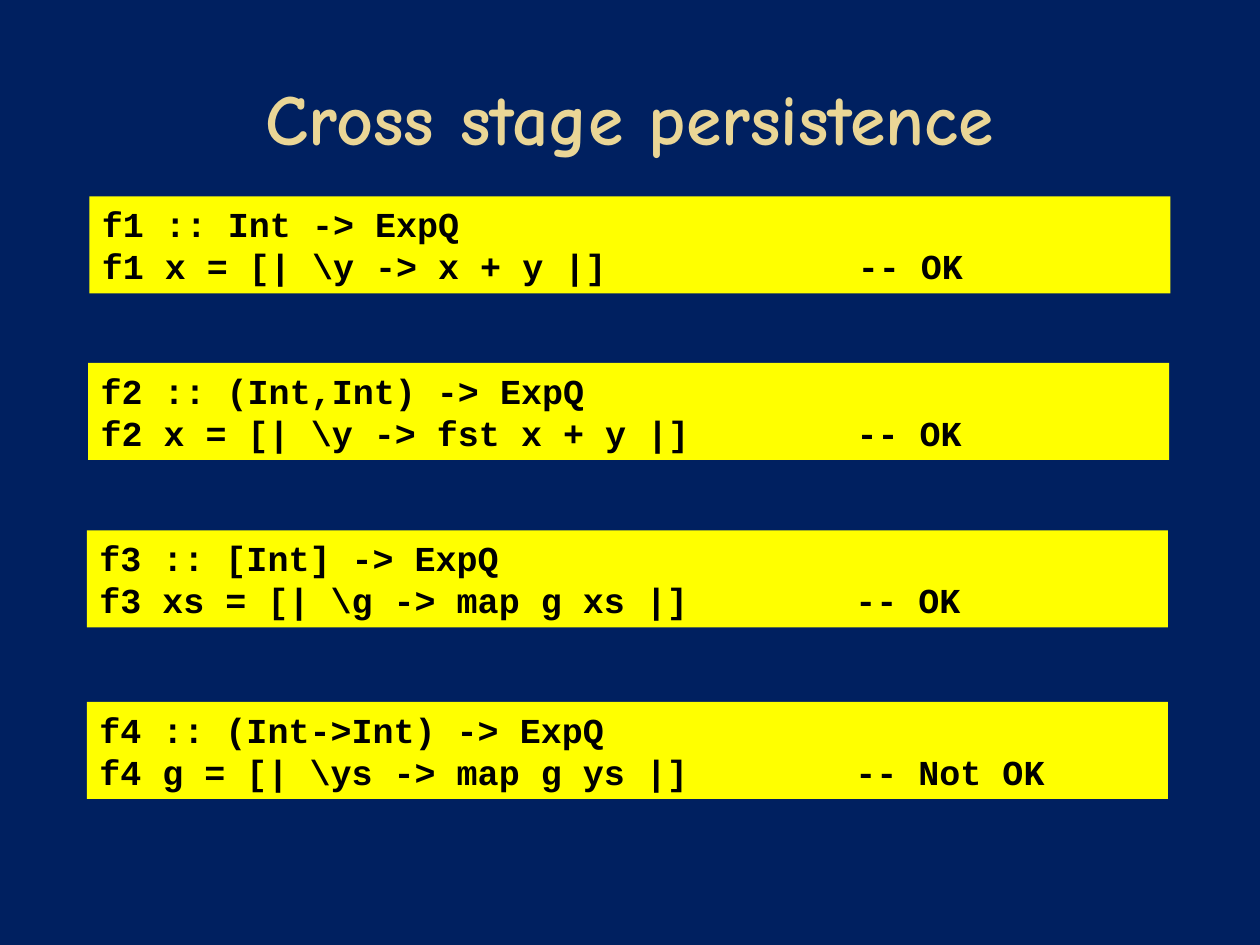
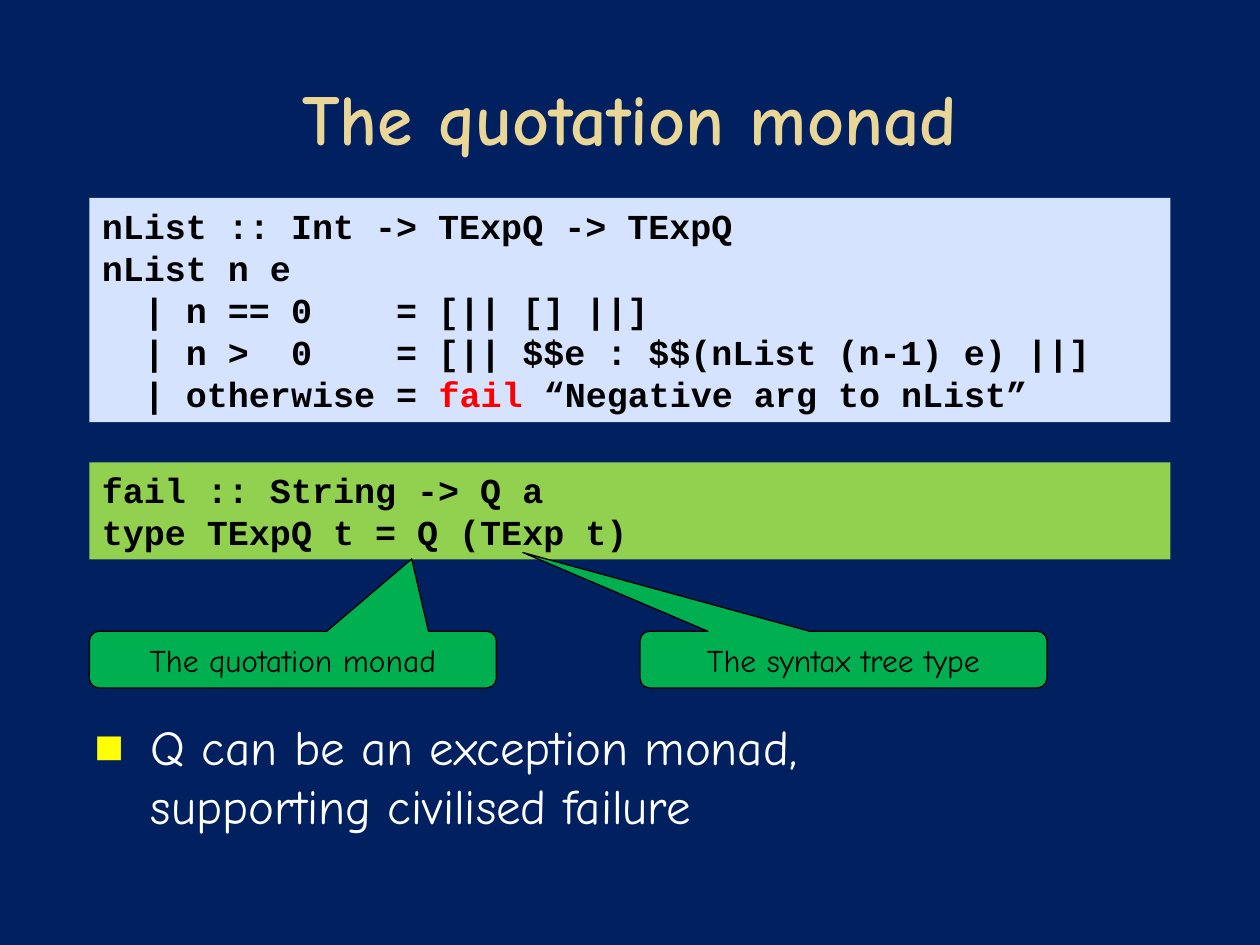
from dataclasses import dataclass

from lxml import etree
from pptx import Presentation
from pptx import util as u
from pptx.dml.color import RGBColor
from pptx.enum import shapes, text
from pptx.oxml.ns import qn

PX = 9144  # one px is a hundredth of an inch
COLOURS = {
    "night": "002060", "title": "EAD696", "body": "FFFFFF", "ink": "000000",
    "bullet": "FFFF00", "example": "FFFF00", "definition": "D6E3FF",
    "signature": "92D050", "callout": "00B050", "alert": "FF0000",
}
PROSE, CODE = "Comic Neue", "Courier New"
VERDICT_TAB = 600


@dataclass(frozen=True)
class Style:
    font: str
    size: int
    colour: str
    bold: bool = False


@dataclass(frozen=True)
class Box:
    left: int
    top: int
    width: int
    height: int

    def emu(self) -> list[int]:
        return [n * PX for n in (self.left, self.top, self.width, self.height)]


@dataclass(frozen=True)
class Span:
    words: str
    colour: str = "ink"


@dataclass(frozen=True)
class CodeBlock:
    box: Box
    fill: str
    lines: tuple[tuple[Span, ...], ...]


@dataclass(frozen=True)
class Callout:
    left: int
    words: str
    tip: tuple[float, float]


TITLE = Style(PROSE, 41, "title", True)
BODY = Style(PROSE, 28, "body")
LABEL = Style(PROSE, 18, "ink")


def rgb(name: str) -> RGBColor:
    return RGBColor.from_string(COLOURS[name])


def add_run(paragraph, words: str, style: Style) -> None:
    run = paragraph.add_run()
    run.text = words
    run.font.name = style.font
    run.font.size = u.Pt(style.size)
    run.font.bold = style.bold
    run.font.color.rgb = rgb(style.colour)


def add_title_slide(deck, title: str):
    """Add a slide with the shared background and a centred title."""
    slide = deck.slides.add_slide(deck.slide_layouts[6])
    slide.background.fill.solid()
    slide.background.fill.fore_color.rgb = rgb("night")
    frame = slide.shapes.add_textbox(*Box(50, 30, 900, 125).emu()).text_frame
    frame.word_wrap = True
    frame.vertical_anchor = text.MSO_ANCHOR.MIDDLE
    heading = frame.paragraphs[0]
    heading.alignment = text.PP_ALIGN.CENTER
    add_run(heading, title, TITLE)
    return slide


def add_panel(slide, kind, box: Box, fill: str):
    panel = slide.shapes.add_shape(kind, *box.emu())
    panel.shadow.inherit = False
    panel.fill.solid()
    panel.fill.fore_color.rgb = rgb(fill)
    panel.text_frame.word_wrap = True
    return panel


def add_tab_stop(paragraph, position: int) -> None:
    stops = etree.SubElement(paragraph._p.get_or_add_pPr(), qn("a:tabLst"))
    etree.SubElement(stops, qn("a:tab"), pos=str(position * PX), algn="l")


def add_code(slide, block: CodeBlock) -> None:
    panel = add_panel(slide, shapes.MSO_SHAPE.RECTANGLE, block.box, block.fill)
    panel.line.fill.background()
    frame = panel.text_frame
    frame.vertical_anchor = text.MSO_ANCHOR.TOP
    for number, spans in enumerate(block.lines):
        line = frame.add_paragraph() if number else frame.paragraphs[0]
        line.alignment = text.PP_ALIGN.LEFT
        if any("\t" in span.words for span in spans):
            add_tab_stop(line, VERDICT_TAB)
        for span in spans:
            add_run(line, span.words, Style(CODE, 20, span.colour, True))


def add_callout(slide, callout: Callout) -> None:
    panel = add_panel(slide, shapes.MSO_SHAPE.ROUNDED_RECTANGULAR_CALLOUT,
                      Box(callout.left, 501, 323, 45), "callout")
    for index, value in enumerate((*callout.tip, 0.167)):
        panel.adjustments[index] = value
    panel.line.color.rgb = rgb("ink")
    panel.line.width = u.Pt(0.75)
    panel.text_frame.vertical_anchor = text.MSO_ANCHOR.MIDDLE
    label = panel.text_frame.paragraphs[0]
    label.alignment = text.PP_ALIGN.CENTER
    add_run(label, callout.words, LABEL)


def add_bullet(slide, box: Box, lines: tuple[str, ...]) -> None:
    frame = slide.shapes.add_textbox(*box.emu()).text_frame
    frame.word_wrap = True
    point = frame.paragraphs[0]
    properties = point._p.get_or_add_pPr()
    properties.set("marL", str(60 * PX))
    properties.set("indent", str(-45 * PX))
    colour = etree.SubElement(properties, qn("a:buClr"))
    etree.SubElement(colour, qn("a:srgbClr"), val=COLOURS["bullet"])
    etree.SubElement(properties, qn("a:buFont"), typeface="Arial")
    etree.SubElement(properties, qn("a:buChar"), char="■")
    for number, words in enumerate(lines):
        if number:
            point.add_line_break()
        add_run(point, words, BODY)


def plain(*lines: str) -> tuple[tuple[Span, ...], ...]:
    return tuple((Span(line),) for line in lines)


def example(left: int, top: int, signature: str, body: str, verdict: str) -> CodeBlock:
    return CodeBlock(Box(left, top, 858, 77), "example",
                     plain(signature, f"{body}\t-- {verdict}"))


STAGE_EXAMPLES = (
    example(71, 156, "f1 :: Int -> ExpQ", r"f1 x = [| \y -> x + y |]", "OK"),
    example(70, 288, "f2 :: (Int,Int) -> ExpQ", r"f2 x = [| \y -> fst x + y |]", "OK"),
    example(69, 421, "f3 :: [Int] -> ExpQ", r"f3 xs = [| \g -> map g xs |]", "OK"),
    example(69, 557, "f4 :: (Int->Int) -> ExpQ", r"f4 g = [| \ys -> map g ys |]", "Not OK"),
)

MONAD_CODE = (
    CodeBlock(Box(71, 157, 858, 178), "definition", (
        *plain("nList :: Int -> TExpQ -> TExpQ",
               "nList n e",
               "  | n == 0    = [|| [] ||]",
               "  | n >  0    = [|| $$e : $$(nList (n-1) e) ||]"),
        (Span("  | otherwise = "), Span("fail", "alert"),
         Span(" “Negative arg to nList”")),
    )),
    CodeBlock(Box(71, 367, 858, 77), "signature",
              plain("fail :: String -> Q a", "type TExpQ t = Q (TExp t)")),
)

MONAD_CALLOUTS = (
    Callout(71, "The quotation monad", (0.292, -1.775)),
    Callout(508, "The syntax tree type", (-0.788, -1.889)),
)


def main() -> None:
    deck = Presentation()
    deck.slide_width, deck.slide_height = 1000 * PX, 750 * PX

    persistence = add_title_slide(deck, "Cross stage persistence")
    for block in STAGE_EXAMPLES:
        add_code(persistence, block)

    monad = add_title_slide(deck, "The quotation monad")
    add_bullet(monad, Box(50, 564, 900, 126),
               ("Q can be an exception monad,", "supporting civilised failure"))
    for block in MONAD_CODE:
        add_code(monad, block)
    for callout in MONAD_CALLOUTS:
        add_callout(monad, callout)

    deck.save("out.pptx")


if __name__ == "__main__":
    main()
